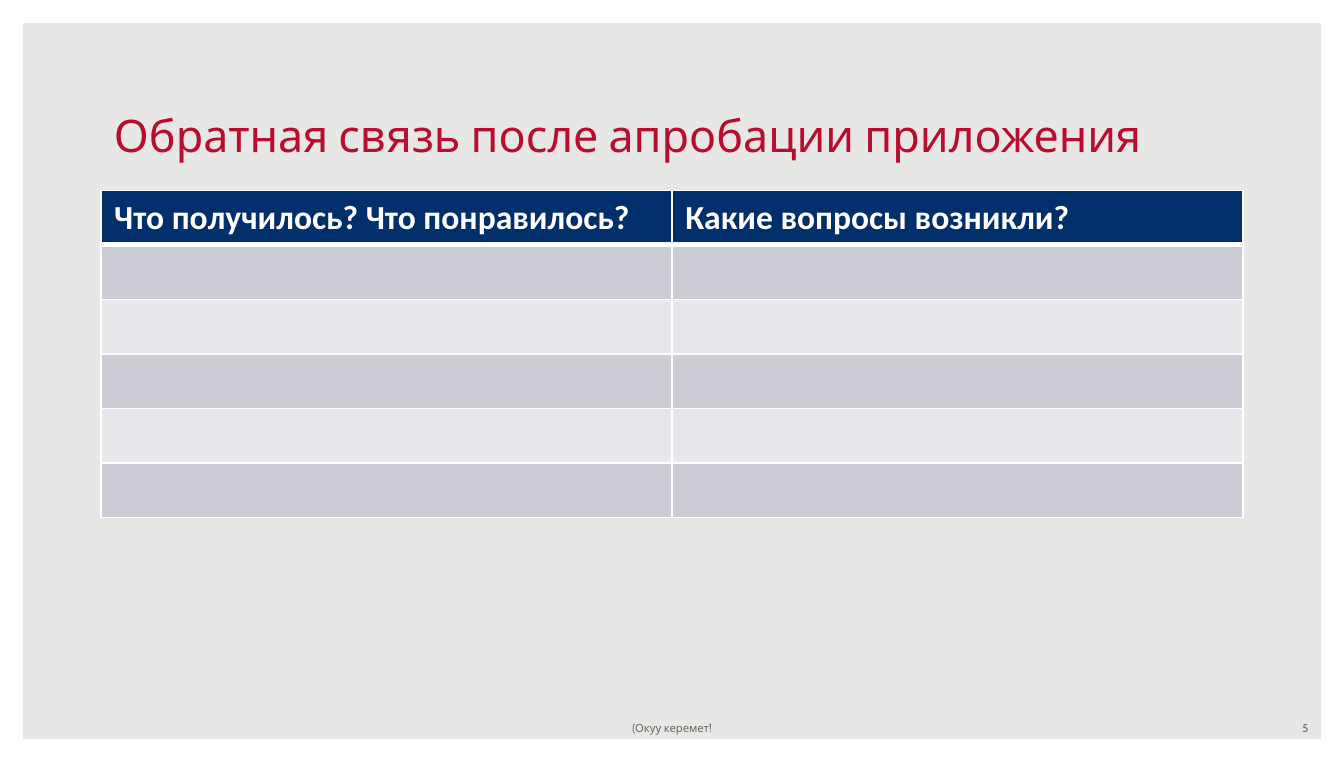
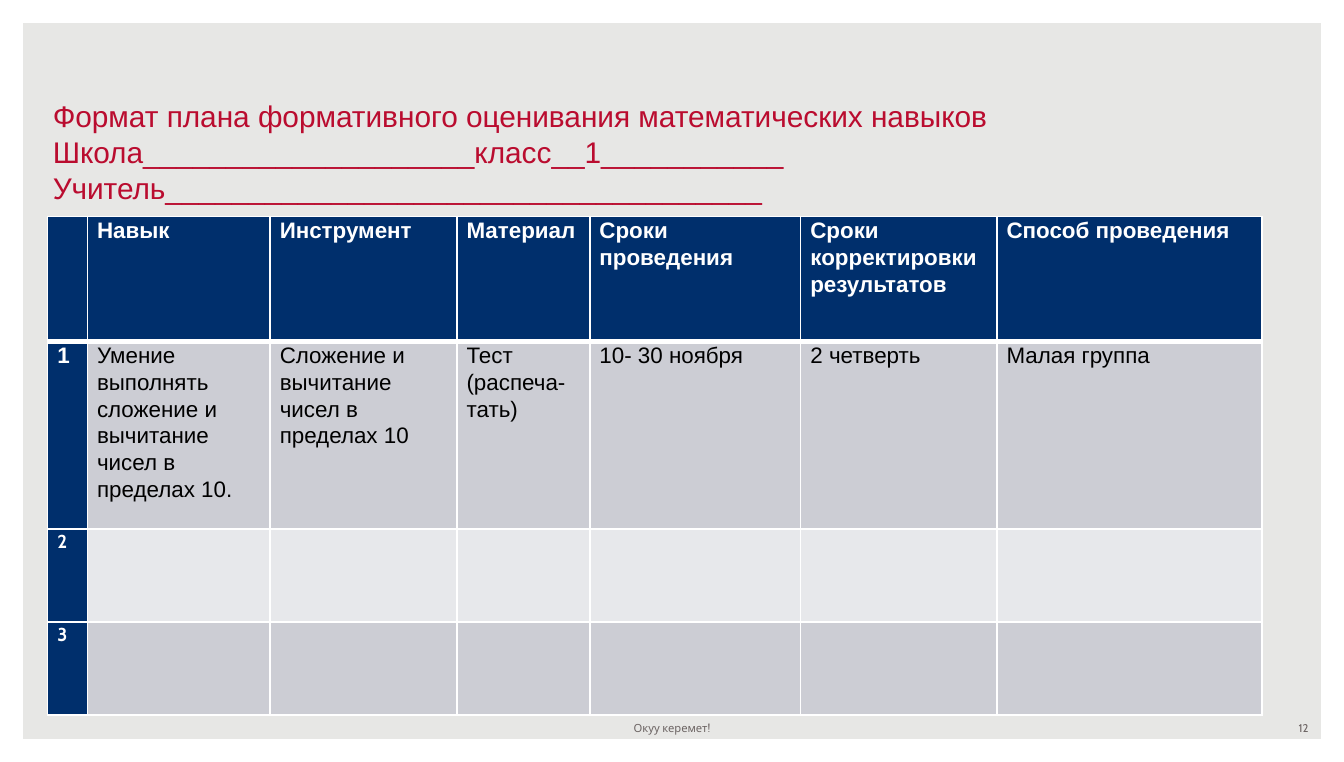
from lxml import etree
from pptx import Presentation
from pptx.dml.color import RGBColor
from pptx.enum.shapes import MSO_SHAPE
from pptx.enum.text import MSO_ANCHOR, PP_ALIGN
from pptx.oxml.ns import qn
from pptx.util import Pt

FRAME = MSO_SHAPE.FRAME
TOP, MIDDLE, BOTTOM = MSO_ANCHOR.TOP, MSO_ANCHOR.MIDDLE, MSO_ANCHOR.BOTTOM
LEFT, CENTER, RIGHT = PP_ALIGN.LEFT, PP_ALIGN.CENTER, PP_ALIGN.RIGHT

# Shared look
WIDTH, HEIGHT = 720, 408.24
WHITE, BLACK, GREY, RED, NAVY = "FFFFFF", "000000", "6C6463", "BA0C2F", "002F6C"
BACKGROUND = "E7E7E5"
BANDS = ("CCCDD4", "E7E8EB")
LINE_SPACING = 1.07
FOOTER_BOX = (246, 383, 228, 14.4)
NUMBER_BOX = (540, 383, 168, 14.4)

FOOTER_FONT = {"name": "Cabin", "size": Pt(6), "color": GREY}
FEEDBACK_HEADER = {"name": "Calibri", "size": Pt(18), "bold": True, "color": WHITE}
PLAN_HEADER = {"name": "Arial", "size": Pt(12), "bold": True, "color": WHITE}
PLAN_BODY = {**PLAN_HEADER, "bold": False, "color": BLACK}
PLAN_NUMBER = {**PLAN_HEADER, "name": "Cabin", "size": Pt(10)}


def rgb(value):
    return RGBColor.from_string(value)


def apply_font(font, values):
    for name, value in values.items():
        if name == "color":
            font.color.rgb = rgb(value)
        else:
            setattr(font, name, value)


def add_text(slide, box, text, font, anchor=MIDDLE, alignment=LEFT, spacing=None):
    frame = slide.shapes.add_textbox(*map(Pt, box)).text_frame
    frame.word_wrap = True
    frame.vertical_anchor = anchor
    paragraph = frame.paragraphs[0]
    paragraph.text = text
    paragraph.alignment = alignment
    paragraph.line_spacing = spacing
    for run in paragraph.runs:
        apply_font(run.font, font)


def add_slide(presentation, footer, number):
    """Blank slide with background, white frame, footer and page number."""
    slide = presentation.slides.add_slide(presentation.slide_layouts[6])
    slide.background.fill.solid()
    slide.background.fill.fore_color.rgb = rgb(BACKGROUND)
    border = slide.shapes.add_shape(FRAME, 0, 0, Pt(WIDTH), Pt(HEIGHT))
    border.adjustments[0] = 0.03
    border.shadow.inherit = False
    border.fill.solid()
    border.fill.fore_color.rgb = rgb(WHITE)
    border.line.fill.background()
    add_text(slide, FOOTER_BOX, footer, FOOTER_FONT, alignment=CENTER)
    add_text(slide, NUMBER_BOX, number, FOOTER_FONT, alignment=RIGHT)
    return slide


def add_title(slide, box, text, font_name, size):
    font = {"name": font_name, "size": Pt(size), "color": RED}
    add_text(slide, box, text, font, anchor=BOTTOM)


def set_borders(cell, row):
    """White grid with a heavier rule under the header row."""
    widths = {"a:lnL": 1, "a:lnR": 1, "a:lnT": 3 if row == 1 else 1,
              "a:lnB": 3 if row == 0 else 1}
    properties = cell._tc.get_or_add_tcPr()
    for tag, width in widths.items():
        line = etree.SubElement(properties, qn(tag), w=str(Pt(width)))
        fill = etree.SubElement(line, qn("a:solidFill"))
        etree.SubElement(fill, qn("a:srgbClr"), val=WHITE)


def add_grid(slide, left, top, widths, heights, texts, font_for,
             number_column=False, margins=None, spacing=None):
    """Banded table; texts maps (row, column) to the wording of a cell."""
    shape = slide.shapes.add_table(len(heights), len(widths), Pt(left), Pt(top),
                                   Pt(sum(widths)), Pt(sum(heights)))
    table = shape.table
    for column, width in zip(table.columns, widths):
        column.width = Pt(width)
    for row, height in enumerate(heights):
        table.rows[row].height = Pt(height)
        for column in range(len(widths)):
            cell = table.cell(row, column)
            set_borders(cell, row)
            is_header = row == 0 or (number_column and column == 0)
            cell.fill.solid()
            cell.fill.fore_color.rgb = rgb(NAVY if is_header else BANDS[(row - 1) % 2])
            cell.vertical_anchor = TOP
            text = texts.get((row, column))
            if not text:
                continue
            for name, value in (margins or {}).items():
                setattr(cell, name, Pt(value))
            paragraph = cell.text_frame.paragraphs[0]
            paragraph.text = text
            paragraph.line_spacing = spacing
            apply_font(paragraph.runs[0].font, font_for(row, column))


def feedback_slide(presentation):
    slide = add_slide(presentation, "(Окуу керемет!", "5")
    add_title(slide, (54, 22.3, 612, 67.7), "Обратная связь после апробации приложения",
              "Cabin", 24)
    texts = {(0, 0): "Что получилось? Что понравилось?",
             (0, 1): "Какие вопросы возникли?"}
    add_grid(slide, 54, 102, [306] * 2, [29.2] * 6, texts,
             lambda row, column: FEEDBACK_HEADER)


def plan_font(row, column):
    if row == 0 or (row, column) == (1, 0):
        return PLAN_HEADER
    return PLAN_NUMBER if column == 0 else PLAN_BODY


def plan_slide(presentation):
    slide = add_slide(presentation, "Окуу керемет!", "12")
    title = "\v".join([
        "Формат плана формативного оценивания математических навыков",
        "Школа" + "_" * 20 + "класс__1" + "_" * 11,
        "Учитель" + "_" * 36,
    ])
    add_title(slide, (21.2, 48, 645, 65.5), title, "Arial", 16)
    rows = [
        ["", "Навык", "Инструмент", "Материал", "Сроки проведения",
         "Сроки корректировки результатов", "Способ проведения"],
        ["1", "Умение выполнять сложение и вычитание чисел в пределах 10.",
         "Сложение и вычитание чисел в пределах 10", "Тест (распеча-тать)",
         "10- 30 ноября", "2 четверть", "Малая группа"],
        ["2"],
        ["3"],
    ]
    texts = {(row, column): text for row, values in enumerate(rows)
             for column, text in enumerate(values)}
    margins = {"margin_left": 5.2, "margin_right": 5.2,
               "margin_top": 0, "margin_bottom": 0}
    add_grid(slide, 25.5, 116, [21.3, 97.9, 100.1, 71.2, 113, 105.1, 142],
             [66.9, 100.4, 50, 50], texts, plan_font,
             number_column=True, margins=margins, spacing=LINE_SPACING)


def main():
    presentation = Presentation()
    presentation.slide_width = Pt(WIDTH)
    presentation.slide_height = Pt(HEIGHT)
    feedback_slide(presentation)
    plan_slide(presentation)
    presentation.save("out.pptx")


if __name__ == "__main__":
    main()
